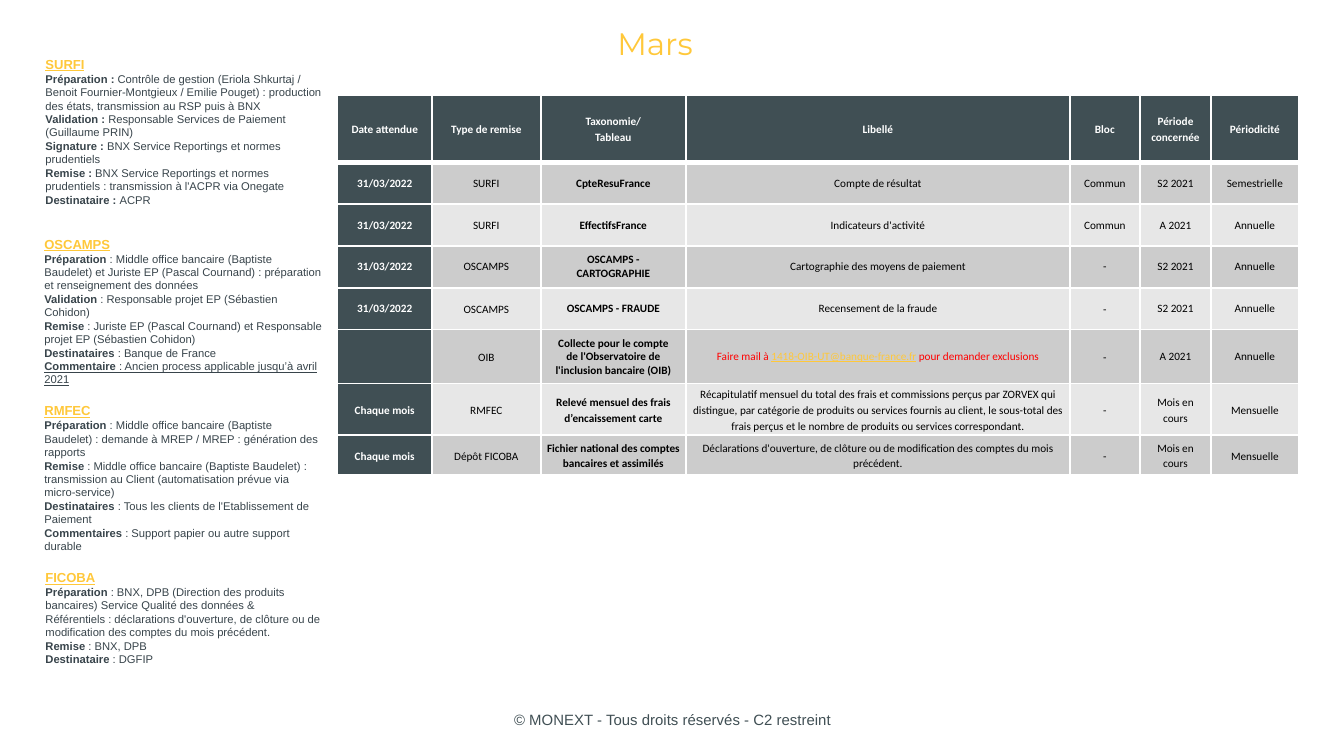
from lxml.etree import SubElement
from pptx import Presentation
from pptx.dml.color import RGBColor
from pptx.enum.text import MSO_ANCHOR, MSO_AUTO_SIZE, PP_ALIGN
from pptx.oxml.ns import qn
from pptx.util import Cm, Pt

SLATE, GOLD, INK = "404F54", "FFC83A", "38444B"
WHITE, BLACK, RED = "FFFFFF", "000000", "FF0000"
GREYS = ["E7E7E7", "CCCCCC"]


def add_span(para, text, size, font, colour, bold=False, underline=False):
    span = para.add_run()
    span.text = text
    span.font.size = Pt(size)
    span.font.name = font
    span.font.color.rgb = RGBColor.from_string(colour)
    span.font.bold = bold
    span.font.underline = underline


def add_border(cell, side, width):
    line = SubElement(cell._tc.get_or_add_tcPr(), qn(f"a:ln{side}"), w=str(Pt(width)))
    fill = SubElement(line, qn("a:solidFill"))
    SubElement(fill, qn("a:srgbClr"), val=WHITE)


deck = Presentation()
deck.slide_width, deck.slide_height = Cm(25.4), Cm(14.29)
page = deck.slides.add_slide(deck.slide_layouts[5])

# Title and footer
title = page.shapes.title
title.left, title.top, title.width, title.height = Cm(5.33), Cm(0.36), Cm(14.1), Cm(0.91)
footer = page.shapes.add_textbox(Cm(8.69), Cm(13.23), Cm(8.05), Cm(0.76))
for box, text, size, font, colour in [
    (title, "Mars", 16.6, "Montserrat", GOLD),
    (footer, "© MONEXT - Tous droits réservés - C2 restreint", 8, "Arial", SLATE),
]:
    frame = box.text_frame
    frame.word_wrap = True
    frame.auto_size = MSO_AUTO_SIZE.NONE
    frame.vertical_anchor = MSO_ANCHOR.MIDDLE
    para = frame.paragraphs[0]
    para.alignment = PP_ALIGN.CENTER
    add_span(para, text, size, font, colour)

# Procedure notes: heading, left, top, height, (label, text) lines
notes = [
    ("SURFI", 0.61, 0.94, 3.3, [
        ("Préparation : ", "Contrôle de gestion (Eriola Shkurtaj / Benoit Fournier-Montgieux / "
         "Emilie Pouget) : production des états, transmission au RSP puis à BNX"),
        ("Validation : ", "Responsable Services de Paiement (Guillaume PRIN)"),
        ("Signature : ", "BNX Service Reportings et normes prudentiels"),
        ("Remise : ", "BNX Service Reportings et normes prudentiels : "
         "transmission à l'ACPR via Onegate"),
        ("Destinataire : ", "ACPR"),
    ]),
    ("OSCAMPS", 0.59, 4.34, 3.2, [
        ("Préparation", " : Middle office bancaire (Baptiste Baudelet) et Juriste EP "
         "(Pascal Cournand) : préparation et renseignement des données"),
        ("Validation", " : Responsable projet EP (Sébastien Cohidon)"),
        ("Remise", " : Juriste EP (Pascal Cournand) et Responsable projet EP (Sébastien Cohidon)"),
        ("Destinataires", " : Banque de France"),
        ("Commentaire", " : Ancien process applicable jusqu’à avril 2021"),
    ]),
    ("RMFEC", 0.59, 7.49, 3, [
        ("Préparation", " : Middle office bancaire (Baptiste Baudelet) : "
         "demande à MREP / MREP : génération des rapports"),
        ("Remise", " : Middle office bancaire (Baptiste Baudelet) : "
         "transmission au Client (automatisation prévue via micro-service)"),
        ("Destinataires", " : Tous les clients de l'Etablissement de Paiement"),
        ("Commentaires", " : Support papier ou autre support durable"),
    ]),
    ("FICOBA", 0.61, 10.64, 2.08, [
        ("Préparation", " : BNX, DPB (Direction des produits bancaires) Service Qualité des "
         "données & Référentiels : déclarations d'ouverture, de clôture ou de modification "
         "des comptes du mois précédent."),
        ("Remise", " : BNX, DPB"),
        ("Destinataire", " : DGFIP"),
    ]),
]
for heading, left, top, height, lines in notes:
    frame = page.shapes.add_textbox(Cm(left), Cm(top), Cm(5.75), Cm(height)).text_frame
    frame.word_wrap = True
    add_span(frame.paragraphs[0], heading, 7, "Arial", GOLD, bold=True, underline=True)
    for label, text in lines:
        para = frame.add_paragraph()
        underline = label == "Commentaire"
        add_span(para, label, 6, "Arial", INK, bold=True, underline=underline)
        add_span(para, text, 6, "Arial", INK, underline=underline)

# Schedule of filings
MAIL = "1418-OIB-UT@banque-france.fr"
schedule = [
    ["Date attendue", "Type de remise", "Taxonomie/\nTableau", "Libellé", "Bloc",
     "Période concernée", "Périodicité"],
    ["31/03/2022", "SURFI", "CpteResuFrance", "Compte de résultat", "Commun", "S2 2021",
     "Semestrielle"],
    ["31/03/2022", "SURFI", "EffectifsFrance", "Indicateurs d'activité", "Commun", "A 2021",
     "Annuelle"],
    ["31/03/2022", "OSCAMPS", "OSCAMPS - CARTOGRAPHIE", "Cartographie des moyens de paiement",
     "-", "S2 2021", "Annuelle"],
    ["31/03/2022", "OSCAMPS", "OSCAMPS - FRAUDE", "Recensement de la fraude", "-", "S2 2021",
     "Annuelle"],
    ["", "OIB", "Collecte pour le compte de l'Observatoire de l'inclusion bancaire (OIB)",
     f"Faire mail à {MAIL} pour demander exclusions", "-", "A 2021", "Annuelle"],
    ["Chaque mois", "RMFEC", "Relevé mensuel des frais d’encaissement carte",
     "Récapitulatif mensuel du total des frais et commissions perçus par ZORVEX qui distingue, "
     "par catégorie de produits ou services fournis au client, le sous-total des frais perçus "
     "et le nombre de produits ou services correspondant.", "-", "Mois en cours", "Mensuelle"],
    ["Chaque mois", "Dépôt FICOBA", "Fichier national des comptes bancaires et assimilés",
     "Déclarations d'ouverture, de clôture ou de modification des comptes du mois précédent.",
     "-", "Mois en cours", "Mensuelle"],
]
widths = [1.78, 2.06, 2.74, 7.26, 1.32, 1.35, 1.65]
heights = [1.27] + [0.79] * 6 + [0.76]
table = page.shapes.add_table(len(heights), len(widths), Cm(6.38), Cm(1.8),
                              Cm(sum(widths)), Cm(sum(heights))).table
for column, width in zip(table.columns, widths):
    column.width = Cm(width)
for row, height in zip(table.rows, heights):
    row.height = Cm(height)

for r, texts in enumerate(schedule):
    for c, text in enumerate(texts):
        cell = table.cell(r, c)
        dark = r == 0 or c == 0
        for side in "LRTB":
            under_header = (r, side) in [(0, "B"), (1, "T")]
            add_border(cell, side, 3 if under_header else 1)
        cell.fill.solid()
        cell.fill.fore_color.rgb = RGBColor.from_string(SLATE if dark else GREYS[r % 2])
        cell.vertical_anchor = MSO_ANCHOR.MIDDLE
        roomy = r in (0, 6, 7) or (r in (4, 5) and c in (1, 4))
        if roomy:
            cell.margin_left = cell.margin_right = Cm(0.08)
            cell.margin_top = cell.margin_bottom = Cm(0.05)
        for i, line in enumerate(text.split("\n")):
            frame = cell.text_frame
            para = frame.add_paragraph() if i else frame.paragraphs[0]
            para.alignment = PP_ALIGN.CENTER
            para.font.size = Pt(6)
            if roomy:
                para.line_spacing = 1.15
            if MAIL in line:
                before, after = line.split(MAIL)
                add_span(para, before, 6, "Calibri", RED)
                add_span(para, MAIL, 6, "Calibri", GOLD, underline=True)
                add_span(para, after, 6, "Calibri", RED)
            elif line:
                add_span(para, line, 6, "Calibri", WHITE if dark else BLACK, bold=dark or c == 2)

deck.save("out.pptx")
